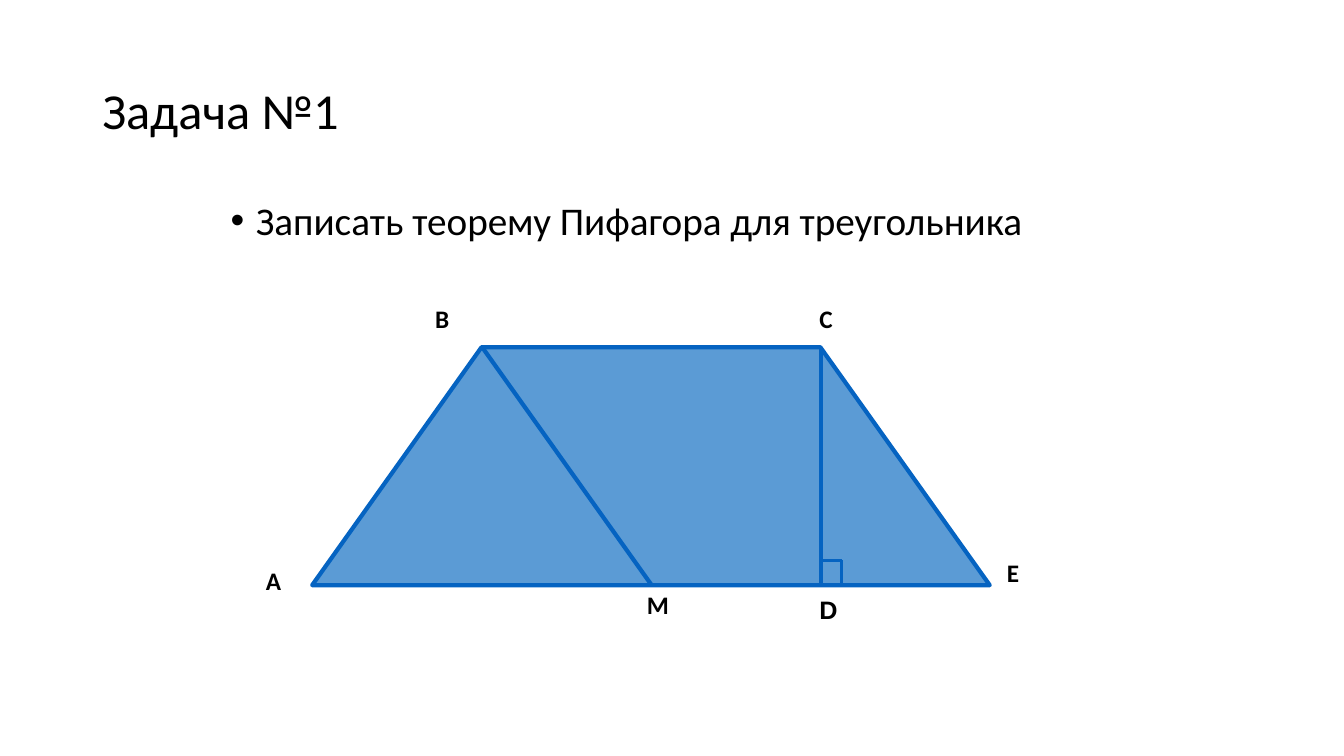
from typing import NamedTuple

from lxml.etree import SubElement
from pptx import Presentation
from pptx.dml.color import RGBColor
from pptx.enum.shapes import MSO_CONNECTOR
from pptx.enum.text import MSO_ANCHOR, MSO_AUTO_SIZE
from pptx.oxml.ns import qn
from pptx.slide import Slide
from pptx.text.text import _Paragraph
from pptx.util import Pt

BLACK, FILL_BLUE, LINE_BLUE = "000000", "5B9BD5", "0563C1"


class Point(NamedTuple):
    x: float
    y: float


class Segment(NamedTuple):
    start: Point
    end: Point
    width: float


class TextBox(NamedTuple):
    text: str
    left: float
    top: float
    width: float
    height: float
    size: float = 18
    font: str = "Calibri"
    bold: bool = True
    wrap: bool = False
    anchor: MSO_ANCHOR = MSO_ANCHOR.TOP
    paragraph_format: dict[str, object] = {}


def color(value: str) -> RGBColor:
    return RGBColor.from_string(value)


def set_attributes(target: object, values: dict[str, object]) -> None:
    for name, value in values.items():
        setattr(target, name, value)


def add_text(slide: Slide, box: TextBox) -> _Paragraph:
    shape = slide.shapes.add_textbox(
        Pt(box.left), Pt(box.top), Pt(box.width), Pt(box.height))
    frame = shape.text_frame
    set_attributes(frame, {
        "word_wrap": box.wrap,
        "auto_size": MSO_AUTO_SIZE.NONE if box.wrap else MSO_AUTO_SIZE.SHAPE_TO_FIT_TEXT,
        "vertical_anchor": box.anchor,
    })
    paragraph = frame.paragraphs[0]
    set_attributes(paragraph, box.paragraph_format)
    run = paragraph.add_run()
    run.text = box.text
    set_attributes(run.font, {"name": box.font, "size": Pt(box.size), "bold": box.bold})
    run.font.color.rgb = color(BLACK)
    return paragraph


def add_bullet(paragraph: _Paragraph, indent: float) -> None:
    properties = paragraph._p.get_or_add_pPr()
    properties.set("marL", str(Pt(indent)))
    properties.set("indent", str(-Pt(indent)))
    SubElement(properties, qn("a:buFont")).set("typeface", "Arial")
    SubElement(properties, qn("a:buChar")).set("char", "•")


def add_polygon(slide: Slide, corners: list[Point]) -> None:
    builder = slide.shapes.build_freeform(*corners[0], scale=Pt(1))
    builder.add_line_segments(corners[1:], close=True)
    shape = builder.convert_to_shape()
    shape.shadow.inherit = False
    shape.fill.solid()
    shape.fill.fore_color.rgb = color(FILL_BLUE)
    shape.line.color.rgb = color(LINE_BLUE)
    shape.line.width = Pt(3)


def add_segment(slide: Slide, segment: Segment) -> None:
    ends = [Pt(value) for value in (*segment.start, *segment.end)]
    connector = slide.shapes.add_connector(MSO_CONNECTOR.STRAIGHT, *ends)
    connector.line.color.rgb = color(LINE_BLUE)
    connector.line.width = Pt(segment.width)
    SubElement(connector._element.spPr, qn("a:effectLst"))


# The long base AE is four equal steps; B, M and C, D stand on them.
LEFT, STEP, TOP, BASE = 223.2, 121, 247.7, 417.6
A, M, D, E = (Point(LEFT + STEP * count, BASE) for count in (0, 2, 3, 4))
B, C = (Point(LEFT + STEP * count, TOP) for count in (1, 3))
MARK_WIDTH, MARK_HEIGHT = 15.1, 17.3
MARK_CORNER = Point(D.x + MARK_WIDTH, BASE - MARK_HEIGHT)

SEGMENTS = [
    Segment(B, M, 3),
    Segment(C, D, 3),
    Segment(Point(D.x, MARK_CORNER.y), MARK_CORNER, 2.25),
    Segment(MARK_CORNER, Point(MARK_CORNER.x, BASE), 2.25),
]
TITLE = TextBox("Задача №1", 66, 28.8, 828, 104.4, size=36, bold=False, wrap=True,
                anchor=MSO_ANCHOR.MIDDLE, paragraph_format={"line_spacing": 0.9})
TASK = TextBox("Записать теорему Пифагора для треугольника", 157.7, 140.4, 769.7, 385.2,
               size=28, bold=False, wrap=True,
               paragraph_format={"line_spacing": 0.9, "space_before": Pt(10)})
LABELS = [
    TextBox("А", 182.9, 400.3, 25.2, 28.8),
    TextBox("В", 303.8, 213.1, 24.5, 28.8),
    TextBox("С", 578.2, 213.1, 37.4, 28.8, wrap=True),
    TextBox("Е", 712.1, 394.6, 23, 28.8),
    TextBox("D", 578.2, 421.2, 27.4, 28.8, font="Arial"),
    TextBox("М", 455, 417.6, 30.2, 28.8),
]


def main() -> None:
    presentation = Presentation()
    set_attributes(presentation, {"slide_width": Pt(960), "slide_height": Pt(540)})
    slide = presentation.slides.add_slide(presentation.slide_layouts[6])
    add_text(slide, TITLE)
    add_bullet(add_text(slide, TASK), 18)
    add_polygon(slide, [A, B, C, E])
    for segment in SEGMENTS:
        add_segment(slide, segment)
    for label in LABELS:
        add_text(slide, label)
    presentation.save("out.pptx")


if __name__ == "__main__":
    main()
